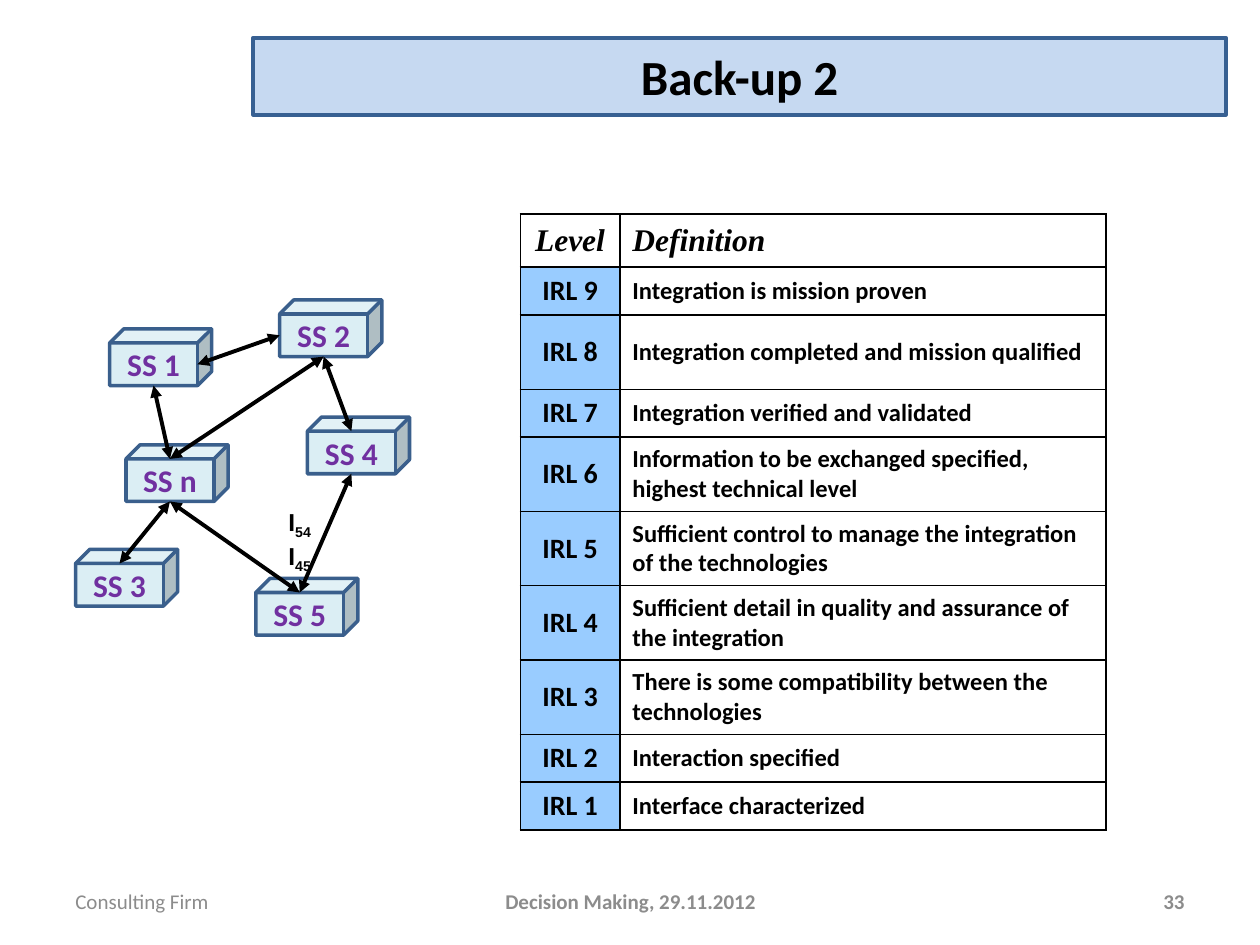
import pptx
import pptx.util
import pptx.dml.color
import pptx.enum.shapes
import pptx.enum.text
import pptx.oxml
import pptx.oxml.ns

Inches = pptx.util.Inches
RGBColor = pptx.dml.color.RGBColor
Align = pptx.enum.text.PP_ALIGN
Middle = pptx.enum.text.MSO_ANCHOR.MIDDLE

BLACK = RGBColor(0x00, 0x00, 0x00)
GREY = RGBColor(0x8C, 0x8C, 0x8C)
PURPLE = RGBColor(0x70, 0x30, 0xA0)
TITLE_FILL = RGBColor(0xC6, 0xD9, 0xF1)
TITLE_LINE = RGBColor(0x37, 0x60, 0x92)
CUBE_FILL = RGBColor(0xDB, 0xEE, 0xF4)
CUBE_LINE = RGBColor(0x3A, 0x5F, 0x8C)
LEVEL_FILL = RGBColor(0x99, 0xCC, 0xFF)

TITLE = "Back-up 2"
FOOTERS = [
    ("Consulting Firm", 0.5, 2.33, Align.LEFT, False),
    ("Decision Making, 29.11.2012", 3.42, 3.17, Align.CENTER, True),
    ("33", 7.17, 2.33, Align.RIGHT, True),
]
LEVELS = [
    ("Level", "Definition", 0.42),
    ("IRL 9", "Integration is mission proven", 0.38),
    ("IRL 8", "Integration completed and mission qualified", 0.59),
    ("IRL 7", "Integration verified and validated", 0.38),
    ("IRL 6", "Information to be exchanged specified, highest technical level", 0.59),
    ("IRL 5", "Sufficient control to manage the integration of the technologies", 0.59),
    ("IRL 4", "Sufficient detail in quality and assurance of the integration", 0.59),
    ("IRL 3", "There is some compatibility between the technologies", 0.59),
    ("IRL 2", "Interaction specified", 0.38),
    ("IRL 1", "Interface characterized", 0.38),
]
COLUMN_WIDTHS = [0.79, 3.86]
SUBSYSTEMS = {
    "SS 1": (0.87, 2.61),
    "SS 2": (2.22, 2.38),
    "SS 3": (0.6, 4.36),
    "SS 4": (2.44, 3.31),
    "SS 5": (2.03, 4.59),
    "SS n": (1.0, 3.53),
}
INTERFACES = [
    ("SS 1", "bottom", "SS n", "top"),
    ("SS 2", "left", "SS 1", "right"),
    ("SS 2", "bottom", "SS 4", "top"),
    ("SS 2", "bottom", "SS n", "top"),
    ("SS 4", "bottom", "SS 5", "top"),
    ("SS n", "bottom", "SS 5", "top"),
    ("SS n", "bottom", "SS 3", "top"),
]
INTERFACE_LABELS = [("I", "54"), ("I", "45")]

CUBE_WIDTH, CUBE_HEIGHT = 0.81, 0.45
DEPTH = CUBE_HEIGHT / 4
FRONT_WIDTH = CUBE_WIDTH - DEPTH
FRONT_MIDDLE = (CUBE_HEIGHT + DEPTH) / 2
SITES = {
    "top": (FRONT_WIDTH / 2, DEPTH),
    "bottom": (FRONT_WIDTH / 2, CUBE_HEIGHT),
    "left": (0, FRONT_MIDDLE),
    "right": (FRONT_WIDTH, FRONT_MIDDLE),
}


def format_text(frame, size, color, align, font="Calibri", bold=True, italic=False):
    frame.word_wrap = True
    for para in frame.paragraphs:
        para.alignment = align
        for span in para.runs:
            span.font.name = font
            span.font.size = pptx.util.Pt(size)
            span.font.bold = bold
            span.font.italic = italic
            span.font.color.rgb = color


def paint(shape, fill, line, width):
    shape.fill.solid()
    shape.fill.fore_color.rgb = fill
    shape.line.color.rgb = line
    shape.line.width = pptx.util.Pt(width)


def add_child(parent, tag, **attributes):
    child = pptx.oxml.ns.qn(tag)
    element = parent.makeelement(child, attributes)
    parent.append(element)
    return element


def add_borders(cell):
    properties = cell._tc.get_or_add_tcPr()
    for side in ("a:lnL", "a:lnR", "a:lnT", "a:lnB"):
        line = add_child(properties, side, w=str(pptx.util.Pt(1)))
        add_child(add_child(line, "a:solidFill"), "a:srgbClr", val=str(BLACK))


def add_title(page):
    title = page.shapes.title
    title.left, title.top = Inches(2.01), Inches(0.3)
    title.width, title.height = Inches(7.72), Inches(0.61)
    title.text_frame.text = TITLE
    title.text_frame.vertical_anchor = Middle
    format_text(title.text_frame, 28, BLACK, Align.CENTER)
    paint(title, TITLE_FILL, TITLE_LINE, 2.25)


def add_footers(page):
    for text, left, width, align, bold in FOOTERS:
        box = page.shapes.add_textbox(Inches(left), Inches(6.95), Inches(width), Inches(0.4))
        box.text_frame.text = text
        box.text_frame.vertical_anchor = Middle
        format_text(box.text_frame, 12, GREY, align, bold=bold)


def add_levels(page):
    height = sum(row[2] for row in LEVELS)
    table = page.shapes.add_table(
        len(LEVELS), 2, Inches(4.13), Inches(1.7), Inches(sum(COLUMN_WIDTHS)), Inches(height)
    ).table
    table.first_row = table.horz_banding = False
    for column, width in zip(table.columns, COLUMN_WIDTHS):
        column.width = Inches(width)
    for row, (level, definition, row_height) in enumerate(LEVELS):
        table.rows[row].height = Inches(row_height)
        header = row == 0
        for column, text in enumerate((level, definition)):
            cell = table.cell(row, column)
            cell.text_frame.text = text
            cell.vertical_anchor = Middle
            size = 18 if header else (16, 14)[column]
            font = "Times New Roman" if header else "Calibri"
            align = (Align.CENTER, Align.LEFT)[column]
            format_text(cell.text_frame, size, BLACK, align, font, italic=header)
            add_borders(cell)
            if column == 0 and not header:
                cell.fill.solid()
                cell.fill.fore_color.rgb = LEVEL_FILL
            else:
                cell.fill.background()


def add_subsystems(page):
    for name, (left, top) in SUBSYSTEMS.items():
        cube = page.shapes.add_shape(
            pptx.enum.shapes.MSO_SHAPE.CUBE,
            Inches(left), Inches(top), Inches(CUBE_WIDTH), Inches(CUBE_HEIGHT),
        )
        cube.shadow.inherit = False
        paint(cube, CUBE_FILL, CUBE_LINE, 2)
        cube.text_frame.text = name
        cube.text_frame.vertical_anchor = Middle
        format_text(cube.text_frame, 18, PURPLE, Align.CENTER)


def site_position(name, site):
    return [Inches(base + offset) for base, offset in zip(SUBSYSTEMS[name], SITES[site])]


def add_interfaces(page):
    for start, start_site, end, end_site in INTERFACES:
        arrow = page.shapes.add_connector(
            pptx.enum.shapes.MSO_CONNECTOR.STRAIGHT,
            *site_position(start, start_site), *site_position(end, end_site),
        )
        arrow.line.color.rgb = BLACK
        arrow.line.width = pptx.util.Pt(2.25)
        line = arrow.line._get_or_add_ln()
        add_child(line, "a:headEnd", type="triangle")
        add_child(line, "a:tailEnd", type="triangle")
        add_child(arrow._element.spPr, "a:effectLst")

    box = page.shapes.add_textbox(Inches(2.19), Inches(3.97), Inches(0.75), Inches(0.6))
    frame = box.text_frame
    for index, parts in enumerate(INTERFACE_LABELS):
        para = frame.add_paragraph() if index else frame.paragraphs[0]
        para.line_spacing = pptx.util.Pt(19.5)
        for part in parts:
            para.add_run().text = part
        para.runs[1].font._element.set("baseline", "-25000")
    format_text(frame, 14, BLACK, Align.LEFT, "Arial")


def main():
    deck = pptx.Presentation()
    deck.slide_width, deck.slide_height = Inches(10), Inches(7.5)
    page = deck.slides.add_slide(deck.slide_layouts[5])
    add_title(page)
    add_footers(page)
    add_levels(page)
    add_subsystems(page)
    add_interfaces(page)
    deck.save("out.pptx")


if __name__ == "__main__":
    main()
